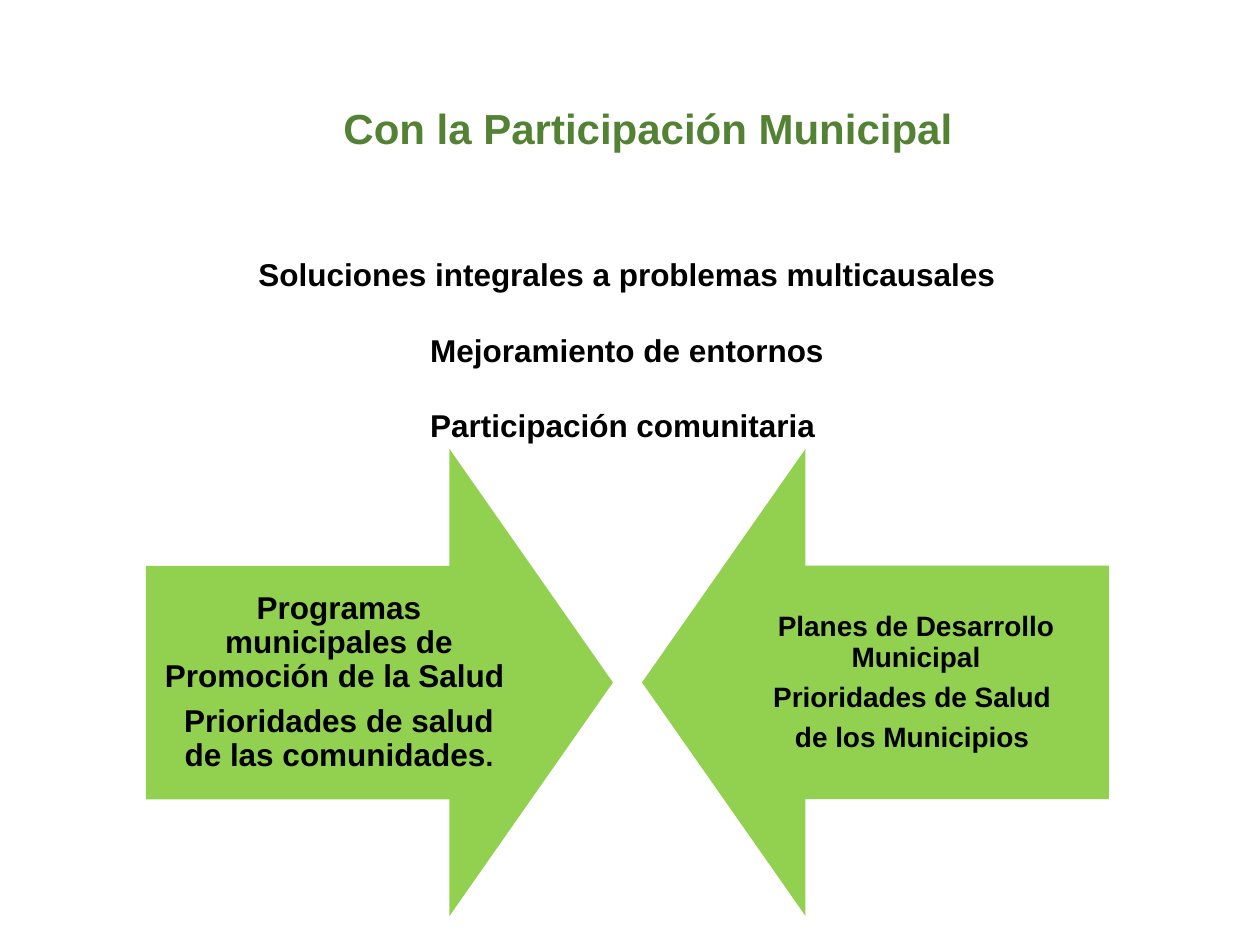
from dataclasses import dataclass

from lxml import etree
from pptx import Presentation
from pptx import util as u
from pptx.dml.color import RGBColor
from pptx.enum import shapes, text
from pptx.oxml.ns import qn

EMU_PER_PX = 914400 / 126
FONT = "Arial"
BLACK, GREEN, LIME = "000000", "548235", "92D050"


@dataclass(frozen=True)
class Run:
    words: str
    size: int
    color: str = BLACK


@dataclass(frozen=True)
class Spacing:
    """Line spacing as a factor, gaps in points."""
    line: float = 1.0
    between: float = 0
    after: float = 0


@dataclass(frozen=True)
class Arrow:
    left: int
    rotation: int
    label_left: int
    inset: int
    after: float
    paragraphs: tuple[tuple[Run, ...], ...]


ARROW_TOP, ARROW_SIDE = 449, 467
LABEL_TOP, LABEL_WIDTH, LABEL_HEIGHT = 566, 386, 234

SOLUTIONS = (
    (Run("Soluciones integrales a problemas multicausales", 18),),
    (Run("Mejoramiento de entornos", 18),),
    (Run("Participación comunitaria ", 18),),
)
ARROWS = (
    Arrow(146, 270, 146, 18, 6.3, (
        (Run("Programas municipales de Promoción de la Salud ", 18),),
        (Run("Prioridades de salud de las comunidades", 18), Run(".", 16)),
    )),
    Arrow(642, 90, 723, 15, 5.6, (
        (Run("Planes de Desarrollo Municipal", 16),),
        (Run("Prioridades de Salud ", 16),),
        (Run("de los Municipios ", 16),),
    )),
)


def px(length: int) -> u.Emu:
    return u.Emu(round(length * EMU_PER_PX))


def rgb(color: str) -> RGBColor:
    return RGBColor.from_string(color)


def add_text(slide, box: tuple[int, int, int, int], paragraphs, spacing: Spacing,
             anchor=text.MSO_ANCHOR.TOP, inset: int | None = None):
    frame = slide.shapes.add_textbox(*map(px, box)).text_frame
    frame.word_wrap = True
    frame.vertical_anchor = anchor
    if inset is not None:
        frame.margin_left = frame.margin_right = px(inset)
        frame.margin_top = frame.margin_bottom = px(inset)
    for i, runs in enumerate(paragraphs):
        paragraph = frame.add_paragraph() if i else frame.paragraphs[0]
        paragraph.alignment = text.PP_ALIGN.CENTER
        paragraph.line_spacing = spacing.line
        paragraph.space_before = u.Pt(spacing.between if i else 0)
        paragraph.space_after = u.Pt(spacing.after)
        for item in runs:
            run = paragraph.add_run()
            run.text = item.words
            run.font.name = FONT
            run.font.size = u.Pt(item.size)
            run.font.bold = True
            run.font.color.rgb = rgb(item.color)
    return frame


def indent(paragraph, left: int) -> None:
    properties = paragraph._p.get_or_add_pPr()
    properties.set("marL", str(px(left)))
    properties.set("indent", "0")


def add_text_shadow(run) -> None:
    effects = etree.Element(qn("a:effectLst"))
    shadow = etree.SubElement(effects, qn("a:outerShdw"), blurRad="38100",
                              dist="38100", dir="2700000", algn="tl")
    etree.SubElement(shadow, qn("a:srgbClr"), val=BLACK)
    run.font._element.find(qn("a:solidFill")).addnext(effects)


def add_arrow(slide, arrow: Arrow) -> None:
    shape = slide.shapes.add_shape(
        shapes.MSO_SHAPE.DOWN_ARROW,
        px(arrow.left), px(ARROW_TOP), px(ARROW_SIDE), px(ARROW_SIDE))
    shape.rotation = arrow.rotation
    shape.adjustments[0], shape.adjustments[1] = 0.5, 0.35
    shape.shadow.inherit = False
    shape.fill.solid()
    shape.fill.fore_color.rgb = rgb(LIME)
    shape.line.fill.background()
    add_text(slide, (arrow.label_left, LABEL_TOP, LABEL_WIDTH, LABEL_HEIGHT),
             arrow.paragraphs, Spacing(line=0.9, after=arrow.after),
             text.MSO_ANCHOR.MIDDLE, arrow.inset)


def main() -> None:
    deck = Presentation()
    deck.slide_width, deck.slide_height = u.Inches(10), u.Inches(7.5)
    slide = deck.slides.add_slide(deck.slide_layouts[6])

    add_text(slide, (183, 249, 888, 242), SOLUTIONS, Spacing(between=21.5))

    title = add_text(slide, (224, 91, 810, 69),
                     ((Run("Con la Participación Municipal", 24, GREEN),),),
                     Spacing(line=1.1), text.MSO_ANCHOR.MIDDLE)
    indent(title.paragraphs[0], 38)
    add_text_shadow(title.paragraphs[0].runs[0])

    for arrow in ARROWS:
        add_arrow(slide, arrow)

    deck.save("out.pptx")


if __name__ == "__main__":
    main()
